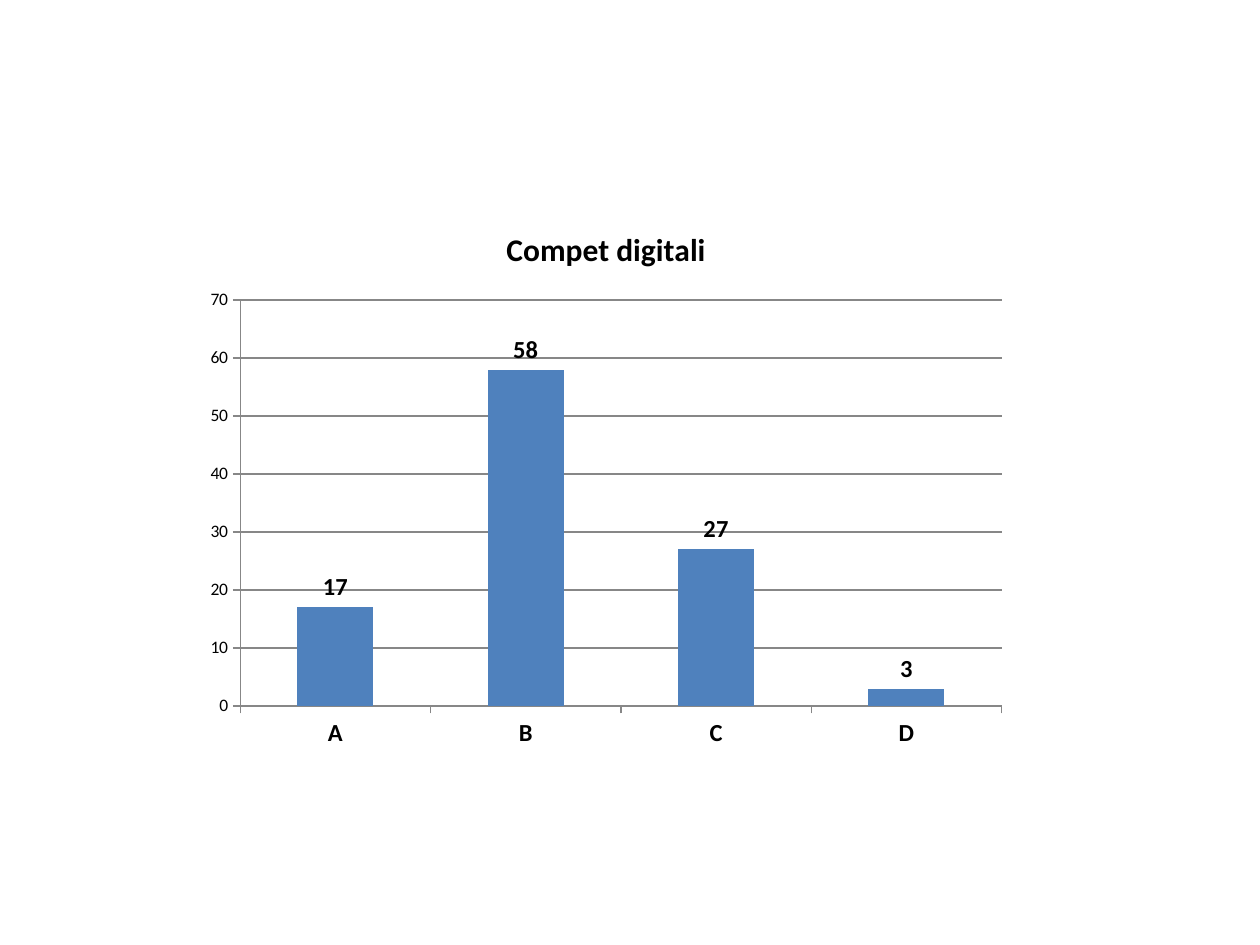
"""Build a slide with a column chart of digital competence levels."""
from pptx import Presentation
from pptx.chart.data import CategoryChartData
from pptx.dml.color import RGBColor
from pptx.enum.chart import XL_CHART_TYPE as ChartType
from pptx.enum.chart import XL_LABEL_POSITION as LabelPosition
from pptx.enum.chart import XL_TICK_MARK as TickMark
from pptx.util import Inches, Pt


def color(hex_code):
    return RGBColor.from_string(hex_code)


class SlideBuilder:
    font_name = "Calibri"
    text_color = "000000"
    line_color = "878787"
    bar_color = "4F81BD"

    def __init__(self, page):
        self.page = page

    def style_font(self, font, size, bold=False):
        font.name = self.font_name
        font.size = Pt(size)
        font.bold = bold
        font.color.rgb = color(self.text_color)

    def style_line(self, line):
        line.color.rgb = color(self.line_color)
        line.width = Pt(0.75)

    def style_axis(self, axis, size, bold, gridlines):
        axis.major_tick_mark = TickMark.OUTSIDE
        axis.minor_tick_mark = TickMark.NONE
        axis.has_major_gridlines = gridlines
        self.style_line(axis.format.line)
        self.style_font(axis.tick_labels.font, size, bold)
        if gridlines:
            self.style_line(axis.major_gridlines.format.line)

    def column_chart(self, title, values, left, top, width, height):
        data = CategoryChartData()
        data.categories = list(values)
        data.add_series(title, list(values.values()))
        chart = self.page.shapes.add_chart(
            ChartType.COLUMN_CLUSTERED, Inches(left), Inches(top),
            Inches(width), Inches(height), data).chart
        self.style_font(chart.font, 10)
        chart.has_legend = False
        chart.has_title = True
        heading = chart.chart_title.text_frame
        heading.text = title
        self.style_font(heading.paragraphs[0].runs[0].font, 18, True)
        chart.chart_title.include_in_layout = False

        self.style_axis(chart.category_axis, 14, True, False)
        self.style_axis(chart.value_axis, 10, False, True)
        chart.value_axis.minimum_scale = 0
        chart.value_axis.maximum_scale = 70
        chart.value_axis.major_unit = 10

        plot = chart.plots[0]
        plot.gap_width = 150
        plot.vary_by_categories = False
        bars = plot.series[0]
        bars.format.fill.solid()
        bars.format.fill.fore_color.rgb = color(self.bar_color)
        labels = bars.data_labels
        labels.show_value = True
        labels.position = LabelPosition.OUTSIDE_END
        self.style_font(labels.font, 14, True)


def main():
    deck = Presentation()
    deck.slide_width = Inches(10)
    deck.slide_height = Inches(7.5)
    builder = SlideBuilder(deck.slides.add_slide(deck.slide_layouts[6]))
    levels = {"A": 17, "B": 58, "C": 27, "D": 3}
    builder.column_chart("Compet digitali", levels, 1.54, 1.62, 6.54, 4.41)
    deck.save("out.pptx")


if __name__ == "__main__":
    main()
